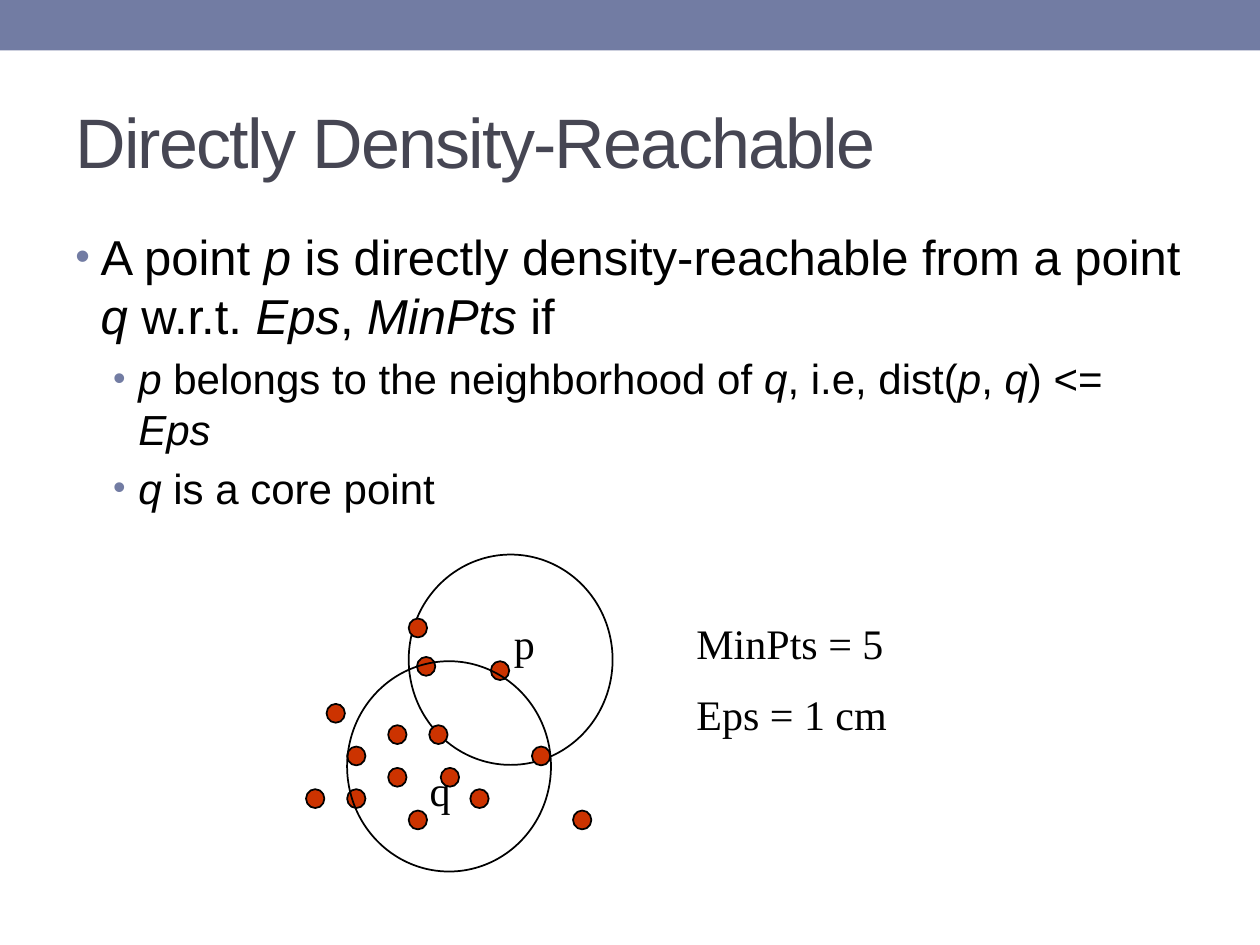
import pptx
import pptx.dml.color
import pptx.enum.shapes
import pptx.enum.text
import pptx.oxml.ns
import pptx.util
from lxml import etree
from pptx.util import Cm, Pt

COLORS = {"accent": "727CA3", "title": "464653", "ink": "000000", "dot": "CC3300"}
TITLE = "Directly Density-Reachable"
BULLETS = [
    (0, "A point |p| is directly density-reachable from a point |q |w.r.t. |Eps|, |MinPts| if"),
    (1, "|p|\u00a0belongs to the neighborhood of\u00a0|q|, i.e,\u00a0dist(|p|, |q|) <= |Eps"),
    (1, "|q|\u00a0is a core point"),
]
COLUMN, ROW = 0.414, 0.43
DOT_SIZE = (0.37, 0.38)
CIRCLE_SIZE = (4.11, 4.24)
DOTS = [
    (1, 7), (4, 8), (5.4, 4.8), (0, 11), (2, 9), (2, 11), (5, 12), (5, 3),
    (11, 9), (9, 5), (4, 10), (6, 8), (8, 11), (13, 12), (6.56, 10),
]


def rgb(name):
    return pptx.dml.color.RGBColor.from_string(COLORS[name])


def style_font(font, name, size, color):
    font.name, font.size = name, Pt(size)
    font.color.rgb = rgb(color)


def add_element(parent, tag, **attributes):
    return etree.SubElement(parent, pptx.oxml.ns.qn(tag), attributes)


def set_space_before(para, percent):
    spacing = add_element(para._p.get_or_add_pPr(), "a:spcBef")
    add_element(spacing, "a:spcPct", val=str(percent * 1000))


def set_bullet(para, margin):
    props = para._p.get_or_add_pPr()
    props.set("marL", str(Cm(margin)))
    props.set("indent", str(Cm(-0.51)))
    add_element(add_element(props, "a:buClr"), "a:srgbClr", val=COLORS["accent"])
    add_element(props, "a:buSzPct", val="85000")
    add_element(props, "a:buFont", typeface="Arial")
    add_element(props, "a:buChar", char="•")


def add_text_frame(page, left, top, width, height):
    box = page.shapes.add_textbox(Cm(left), Cm(top), Cm(width), Cm(height))
    box.text_frame.word_wrap = True
    return box.text_frame


def add_paragraph(frame, index):
    return frame.add_paragraph() if index else frame.paragraphs[0]


def add_shape(page, kind, left, top, width, height, fill=None, line=None):
    shape = page.shapes.add_shape(kind, Cm(left), Cm(top), Cm(width), Cm(height))
    shape.shadow.inherit = False
    if fill:
        shape.fill.solid()
        shape.fill.fore_color.rgb = rgb(fill)
    else:
        shape.fill.background()
    if line:
        shape.line.color.rgb = rgb(line)
        shape.line.width = Pt(1)
    else:
        shape.line.fill.background()


def add_ellipse(page, left, top, cell, size, fill=None):
    column, row = cell
    add_shape(page, pptx.enum.shapes.MSO_SHAPE.OVAL,
              left + column * COLUMN, top + row * ROW, *size, fill, "ink")


def add_title(page, left, top, width, height):
    frame = add_text_frame(page, left, top, width, height)
    frame.vertical_anchor = pptx.enum.text.MSO_ANCHOR.MIDDLE
    span = frame.paragraphs[0].add_run()
    span.text = TITLE
    style_font(span.font, "Arial", 40, "title")
    span._r.get_or_add_rPr().set("spc", "-100")


def add_definition(page, left, top, width, height):
    frame = add_text_frame(page, left, top, width, height)
    for index, (level, text) in enumerate(BULLETS):
        para = add_paragraph(frame, index)
        para.level = level
        set_space_before(para, 20)
        set_bullet(para, (0.51, 1.27)[level])
        style_font(para.font, "Arial", (28, 24)[level], "ink")
        for position, part in enumerate(text.split("|")):
            if part:
                span = para.add_run()
                span.text = part
                span.font.italic = position % 2 == 1


def add_note(page, left, top, width, height, lines):
    frame = add_text_frame(page, left, top, width, height)
    for index, line in enumerate(lines):
        para = add_paragraph(frame, index)
        para.text = line
        set_space_before(para, 50)
        style_font(para.font, "Times New Roman", 24, "ink")


def add_diagram(page, left, top):
    add_note(page, left + 7.62, top + 1.14, 6.78, 3.86, ["MinPts = 5", "Eps = 1 cm"])
    add_ellipse(page, left, top, (5, 0), CIRCLE_SIZE)
    for cell in DOTS:
        add_ellipse(page, left, top, cell, DOT_SIZE, "dot")
    add_ellipse(page, left, top, (2, 5), CIRCLE_SIZE)
    add_note(page, left + 3.94, top + 1.14, 1.42, 1.75, ["p"])
    add_note(page, left + 2.24, top + 4.11, 1.42, 1.75, ["q"])


def main():
    deck = pptx.Presentation()
    deck.slide_width, deck.slide_height = Cm(25.4), Cm(19.05)
    page = deck.slides.add_slide(deck.slide_layouts[6])
    add_shape(page, pptx.enum.shapes.MSO_SHAPE.RECTANGLE, 0, 0, 25.4, 1.02, "accent")
    add_title(page, 1.27, 1.47, 22.86, 2.74)
    add_definition(page, 1.27, 4.45, 22.86, 13.54)
    add_diagram(page, 6.17, 11.18)
    deck.save("out.pptx")


if __name__ == "__main__":
    main()
